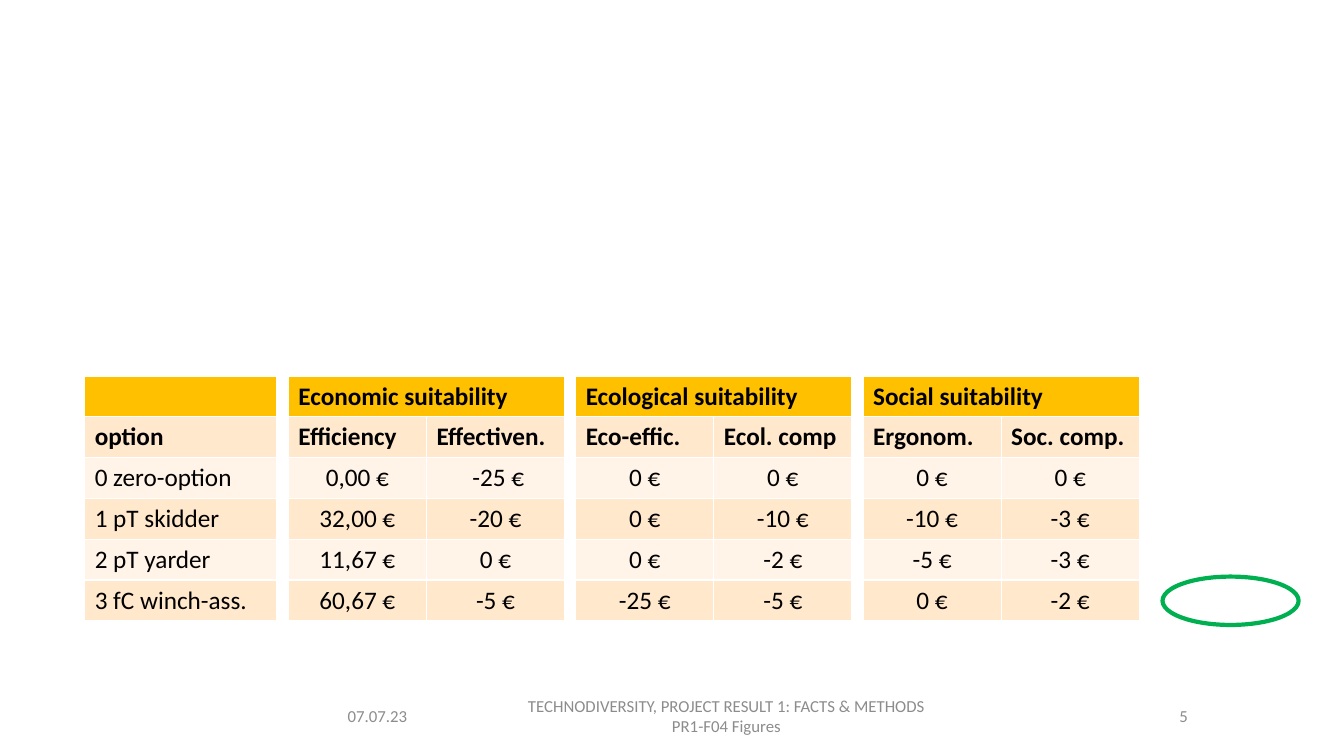
import pptx
import pptx.util
import pptx.dml.color
import pptx.enum.shapes
import pptx.enum.text

Inches = pptx.util.Inches
Pt = pptx.util.Pt
ALIGN = pptx.enum.text.PP_ALIGN
COLORS = {
    "header": "FFC000",
    "dark_band": "FFE8CC",
    "light_band": "FFF4E7",
    "text": "000000",
    "footer": "8C8C8C",
    "highlight": "00B050",
}


def color(name):
    return pptx.dml.color.RGBColor.from_string(COLORS[name])


def style_paragraph(paragraph, size, color_name, alignment, bold=False):
    paragraph.alignment = alignment
    for run in paragraph.runs:
        run.font.name = "Calibri"
        run.font.size = Pt(size)
        run.font.bold = bold
        run.font.color.rgb = color(color_name)


presentation = pptx.Presentation()
presentation.slide_width = Inches(13.33)
presentation.slide_height = Inches(7.5)
slide = presentation.slides.add_slide(presentation.slide_layouts[6])

footers = [
    (3.35, 1.34, "07.07.23", ALIGN.LEFT),
    (4.86, 4.69, "TECHNODIVERSITY, PROJECT RESULT 1: FACTS & METHODS\nPR1-F04 Figures", ALIGN.CENTER),
    (9.77, 2.11, "5", ALIGN.RIGHT),
]
for left, width, text, alignment in footers:
    text_box = slide.shapes.add_textbox(Inches(left), Inches(6.9), Inches(width), Inches(0.4))
    text_frame = text_box.text_frame
    text_frame.word_wrap = True
    text_frame.vertical_anchor = pptx.enum.text.MSO_ANCHOR.MIDDLE
    text_frame.text = text
    for paragraph in text_frame.paragraphs:
        style_paragraph(paragraph, 12, "footer", alignment)

option_rows = [[""], ["option"], ["0 zero-option"], ["1 pT skidder"], ["2 pT yarder"], ["3 fC winch-ass."]]
economic_rows = [
    ["Economic suitability", ""],
    ["Efficiency", "Effectiven."],
    ["0,00 €", " -25 €"],
    ["32,00 €", "-20 €"],
    ["11,67 €", "0 €"],
    ["60,67 €", "-5 €"],
]
ecological_rows = [
    ["Ecological suitability", ""],
    ["Eco-effic.", "Ecol. comp"],
    ["0 €", "0 €"],
    ["0 €", "-10 €"],
    ["0 €", "-2 €"],
    ["-25 €", "-5 €"],
]
social_rows = [
    ["Social suitability", ""],
    ["Ergonom.", "Soc. comp."],
    ["0 €", "0 €"],
    ["-10 €", "-3 €"],
    ["-5 €", "-3 €"],
    ["0 €", "-2 €"],
]
tables = [
    (0.84, 1.9, option_rows),
    (2.86, 1.37, economic_rows),
    (5.71, 1.37, ecological_rows),
    (8.56, 1.37, social_rows),
]
row_height = 0.405
for left, column_width, rows in tables:
    column_count = len(rows[0])
    table = slide.shapes.add_table(
        len(rows), column_count, Inches(left), Inches(3.73),
        Inches(column_width * column_count), Inches(row_height * len(rows)),
    ).table
    for column in table.columns:
        column.width = Inches(column_width)
    for row_index, values in enumerate(rows):
        table.rows[row_index].height = Inches(row_height)
        if row_index == 0:
            fill_name = "header"
        else:
            fill_name = "dark_band" if row_index % 2 else "light_band"
        centered = row_index > 1 and column_count > 1
        for column_index, value in enumerate(values):
            cell = table.cell(row_index, column_index)
            cell.fill.solid()
            cell.fill.fore_color.rgb = color(fill_name)
            cell.text_frame.text = value
            style_paragraph(
                cell.text_frame.paragraphs[0], 18, "text",
                ALIGN.CENTER if centered else ALIGN.LEFT, row_index < 2,
            )
    if column_count > 1:
        table.cell(0, 0).merge(table.cell(0, column_count - 1))

highlight = slide.shapes.add_shape(
    pptx.enum.shapes.MSO_SHAPE.OVAL, Inches(11.53), Inches(5.72), Inches(1.35), Inches(0.48)
)
highlight.shadow.inherit = False
highlight.fill.background()
highlight.line.color.rgb = color("highlight")
highlight.line.width = Pt(3)

presentation.save("out.pptx")
